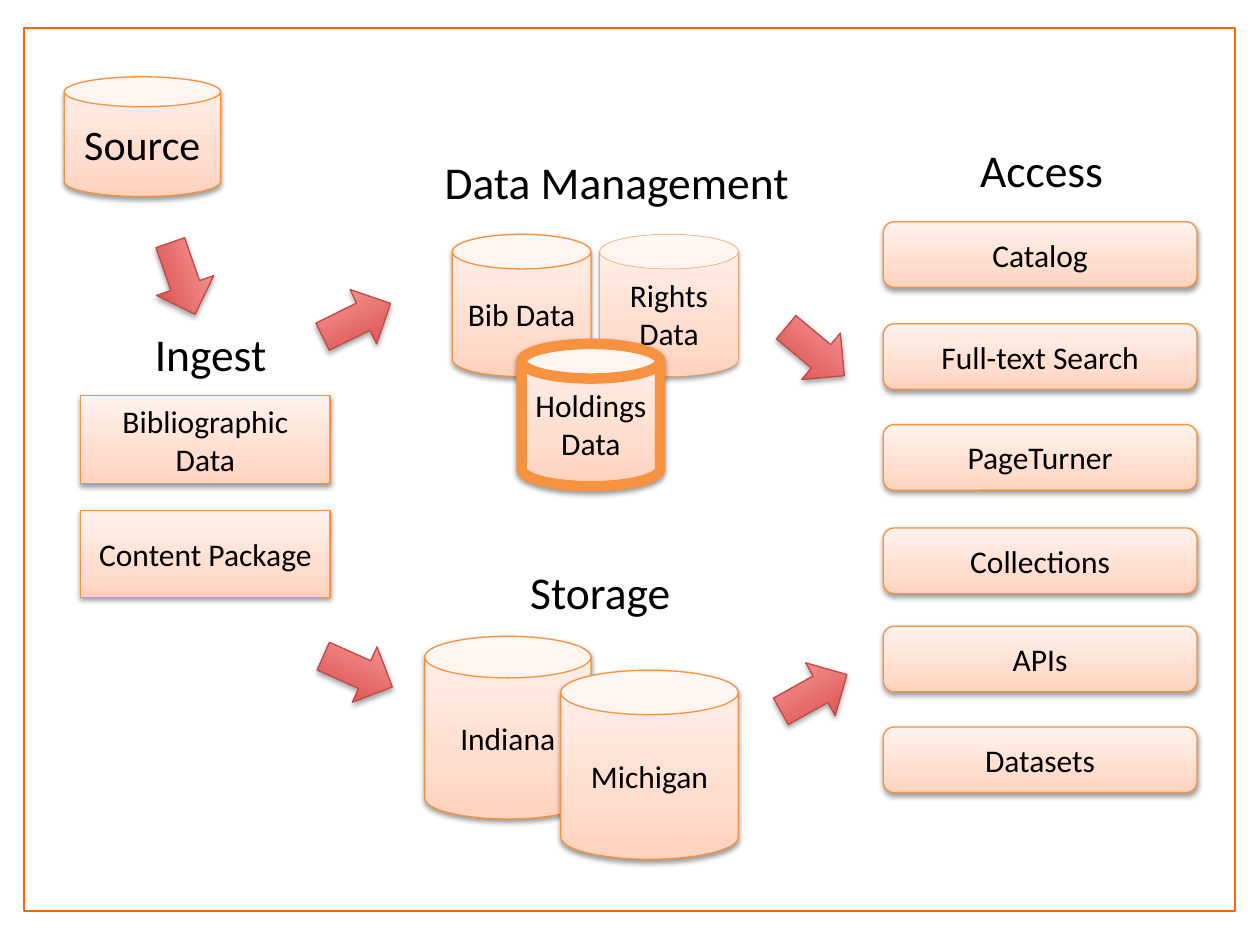
from lxml.etree import SubElement
from pptx import Presentation
from pptx.dml.color import RGBColor
from pptx.enum.shapes import MSO_SHAPE
from pptx.enum.text import MSO_ANCHOR, MSO_AUTO_SIZE, PP_ALIGN
from pptx.oxml.ns import qn
from pptx.util import Inches, Pt

COLORS = {
    "paper": "FFFFFF",
    "frame": "FF6600",
    "text": "000000",
    "peach_line": "F69240",
    "arrow_line": "BF4C48",
    "shadow": "000000",
}
PEACH = [(0, "FFD2BD"), (35, "FFDED0"), (100, "FFF2ED")]
RED = [(0, "D1403C"), (100, "FFA6A5")]


class DiagramSlide:
    font_name = "Calibri"

    def __init__(self, deck):
        self.page = deck.slides.add_slide(deck.slide_layouts[6])

    def shape(self, kind, area, line_color, line_width):
        shape = self.page.shapes.add_shape(kind, *map(Inches, area))
        shape.shadow.inherit = False
        shape.line.color.rgb = RGBColor.from_string(COLORS[line_color])
        shape.line.width = Pt(line_width)
        return shape

    def frame(self, area):
        shape = self.shape(MSO_SHAPE.RECTANGLE, area, "frame", 1)
        shape.fill.solid()
        shape.fill.fore_color.rgb = RGBColor.from_string(COLORS["paper"])

    def shade(self, shape, stops, distance, opacity):
        shape.fill.gradient()
        shape.fill.gradient_angle = 90
        properties = shape._element.spPr
        stop_list = properties.find(qn("a:gradFill")).find(qn("a:gsLst"))
        for stop in list(stop_list):
            stop_list.remove(stop)
        for position, color in stops:
            stop = SubElement(stop_list, qn("a:gs"), pos=str(position * 1000))
            SubElement(stop, qn("a:srgbClr"), val=color)
        shadow = SubElement(
            properties.find(qn("a:effectLst")), qn("a:outerShdw"),
            blurRad=str(Pt(3.1)), dist=str(Pt(distance)),
            dir="5400000", rotWithShape="0",
        )
        color = SubElement(shadow, qn("a:srgbClr"), val=COLORS["shadow"])
        SubElement(color, qn("a:alpha"), val=str(opacity * 1000))

    def label(self, shape, text, size, align):
        shape.text_frame.word_wrap = True
        shape.text_frame.text = text
        para = shape.text_frame.paragraphs[0]
        para.alignment = align
        for span in para.runs:
            span.font.name = self.font_name
            span.font.size = Pt(size)
            span.font.color.rgb = RGBColor.from_string(COLORS["text"])

    def node(self, kind, text, area, size=18, line_width=0.75):
        shape = self.shape(kind, area, "peach_line", line_width)
        self.shade(shape, PEACH, 1.6, 38)
        shape.text_frame.vertical_anchor = MSO_ANCHOR.MIDDLE
        self.label(shape, text, size, PP_ALIGN.CENTER)

    def can(self, text, area, **style):
        self.node(MSO_SHAPE.CAN, text, area, **style)

    def heading(self, text, left, top, width):
        box = self.page.shapes.add_textbox(*map(Inches, (left, top, width, 0.54)))
        self.label(box, text, 26, PP_ALIGN.LEFT)
        box.text_frame.auto_size = MSO_AUTO_SIZE.SHAPE_TO_FIT_TEXT

    def arrow(self, left, top, rotation):
        area = (left, top, 0.6, 0.48)
        shape = self.shape(MSO_SHAPE.RIGHT_ARROW, area, "arrow_line", 0.75)
        self.shade(shape, RED, 1.8, 35)
        shape.rotation = rotation


def main():
    deck = Presentation()
    deck.slide_width = Inches(10)
    deck.slide_height = Inches(7.5)
    slide = DiagramSlide(deck)
    slide.frame((0.19, 0.22, 9.61, 7.01))

    slide.can("Source", (0.51, 0.61, 1.24, 0.95), size=24)
    slide.node(MSO_SHAPE.RECTANGLE, "Bibliographic Data", (0.64, 3.14, 1.98, 0.7))
    slide.node(MSO_SHAPE.RECTANGLE, "Content Package", (0.64, 4.05, 1.98, 0.69))
    slide.can("Indiana", (3.37, 5.05, 1.32, 1.45))
    slide.can("Michigan", (4.45, 5.32, 1.41, 1.5))
    slide.can("Bib Data", (3.59, 1.86, 1.1, 1.13))
    slide.can("Rights Data", (4.76, 1.86, 1.1, 1.13), line_width=0.25)
    slide.can("Holdings Data", (4.14, 2.73, 1.1, 1.13), line_width=6)

    for heading in [
        ("Data Management", 3.43, 1.17, 3.58),
        ("Storage", 4.11, 4.43, 1.77),
        ("Access", 7.68, 1.08, 1.99),
        ("Ingest", 1.13, 2.54, 1.61),
    ]:
        slide.heading(*heading)

    for service, top in [
        ("Catalog", 1.76),
        ("Full-text Search", 2.57),
        ("PageTurner", 3.37),
        ("Collections", 4.19),
        ("APIs", 4.97),
        ("Datasets", 5.77),
    ]:
        slide.node(MSO_SHAPE.ROUNDED_RECTANGLE, service, (7.01, top, 2.49, 0.52))

    for arrow in [
        (1.15, 1.97, 70.9),
        (2.53, 2.3, 333.9),
        (2.54, 5.09, 24),
        (6.17, 2.55, 39.8),
        (6.16, 5.26, 330.9),
    ]:
        slide.arrow(*arrow)

    deck.save("out.pptx")


if __name__ == "__main__":
    main()
